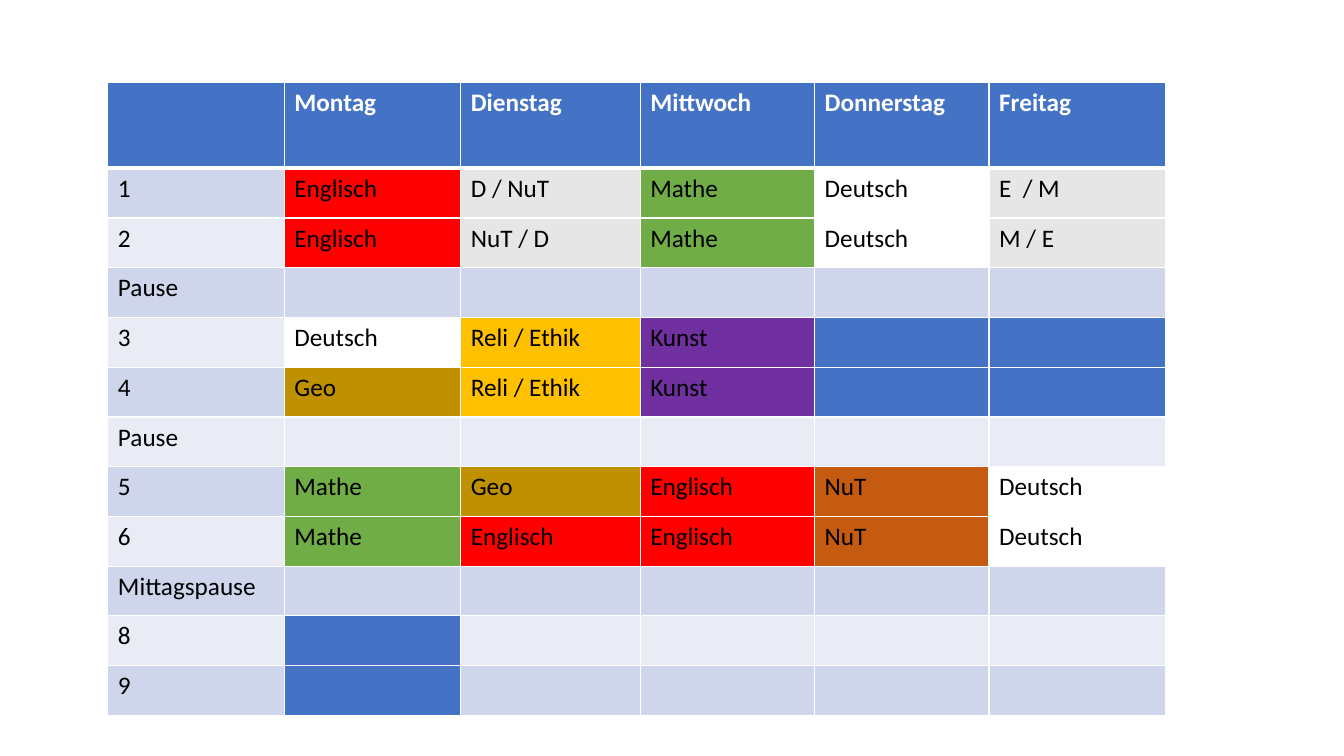
import pptx
import pptx.dml.color
import pptx.oxml
import pptx.oxml.ns
import pptx.util
from pptx.util import Inches

COLORS = {
    "header": "4472C4", "free": "4472C4", "white": "FFFFFF", "black": "000000",
    "odd band": "CFD5EA", "even band": "E9EBF5",
}
SUBJECT_COLORS = {
    "Englisch": "FF0000", "Mathe": "70AD47", "Deutsch": "FFFFFF",
    "Geo": "BF9000", "Kunst": "7030A0", "NuT": "C55A11",
    "Reli / Ethik": "FFC000", "D / NuT": "E7E6E6", "NuT / D": "E7E6E6",
    "E  / M": "E7E6E6", "M / E": "E7E6E6",
}
FREE = None  # a free lesson; "" is a plain banded cell
BLANK = [""] * 5

TIMETABLE = [
    ["", "Montag", "Dienstag", "Mittwoch", "Donnerstag", "Freitag"],
    ["1", "Englisch", "D / NuT", "Mathe", "Deutsch", "E  / M"],
    ["2", "Englisch", "NuT / D", "Mathe", "Deutsch", "M / E"],
    ["Pause"] + BLANK,
    ["3", "Deutsch", "Reli / Ethik", "Kunst", FREE, FREE],
    ["4", "Geo", "Reli / Ethik", "Kunst", FREE, FREE],
    ["Pause"] + BLANK,
    ["5", "Mathe", "Geo", "Englisch", "NuT", "Deutsch"],
    ["6", "Mathe", "Englisch", "Englisch", "NuT", "Deutsch"],
    ["Mittagspause"] + BLANK,
    ["8", FREE, "", "", "", ""],
    ["9", FREE, "", "", "", ""],
]
COLUMN_WIDTHS = [1.75, 1.75, 1.78, 1.73, 1.73, 1.75]
TABLE_HEIGHT = 6.28
HEADER_HEIGHT = 0.85


def add_border(cell, side, points):
    """Draw a white line on one side (L, R, T or B) of the cell."""
    cell._tc.get_or_add_tcPr().append(pptx.oxml.parse_xml(
        f'<a:ln{side} {pptx.oxml.ns.nsdecls("a")} w="{pptx.util.Pt(points)}">'
        f'<a:solidFill><a:srgbClr val="{COLORS["white"]}"/></a:solidFill></a:ln{side}>'))


prs = pptx.Presentation()
prs.slide_width = Inches(13.33)
prs.slide_height = Inches(7.5)
slide = prs.slides.add_slide(prs.slide_layouts[6])

timetable = slide.shapes.add_table(
    len(TIMETABLE), len(COLUMN_WIDTHS), Inches(1.07), Inches(0.82),
    Inches(sum(COLUMN_WIDTHS)), Inches(TABLE_HEIGHT)).table

for column, width in zip(timetable.columns, COLUMN_WIDTHS):
    column.width = Inches(width)
lesson_height = (TABLE_HEIGHT - HEADER_HEIGHT) / (len(TIMETABLE) - 1)
for number, row in enumerate(timetable.rows):
    row.height = Inches(lesson_height if number else HEADER_HEIGHT)

for row_number, entries in enumerate(TIMETABLE):
    is_header = row_number == 0
    band = COLORS["odd band" if row_number % 2 else "even band"]
    for column_number, entry in enumerate(entries):
        cell = timetable.cell(row_number, column_number)

        add_border(cell, "L", 1)
        add_border(cell, "R", 1)
        add_border(cell, "T", 3 if row_number == 1 else 1)
        add_border(cell, "B", 3 if is_header else 1)

        if is_header:
            fill_color = COLORS["header"]
        elif entry is FREE:
            fill_color = COLORS["free"]
        else:
            fill_color = SUBJECT_COLORS.get(entry, band)
        cell.fill.solid()
        cell.fill.fore_color.rgb = pptx.dml.color.RGBColor.from_string(fill_color)

        if entry:
            cell.text_frame.text = entry
            font = cell.text_frame.paragraphs[0].runs[0].font
            font.name = "Calibri"
            font.size = pptx.util.Pt(18)
            font.bold = is_header
            font.color.rgb = pptx.dml.color.RGBColor.from_string(
                COLORS["white" if is_header else "black"])

prs.save("out.pptx")
